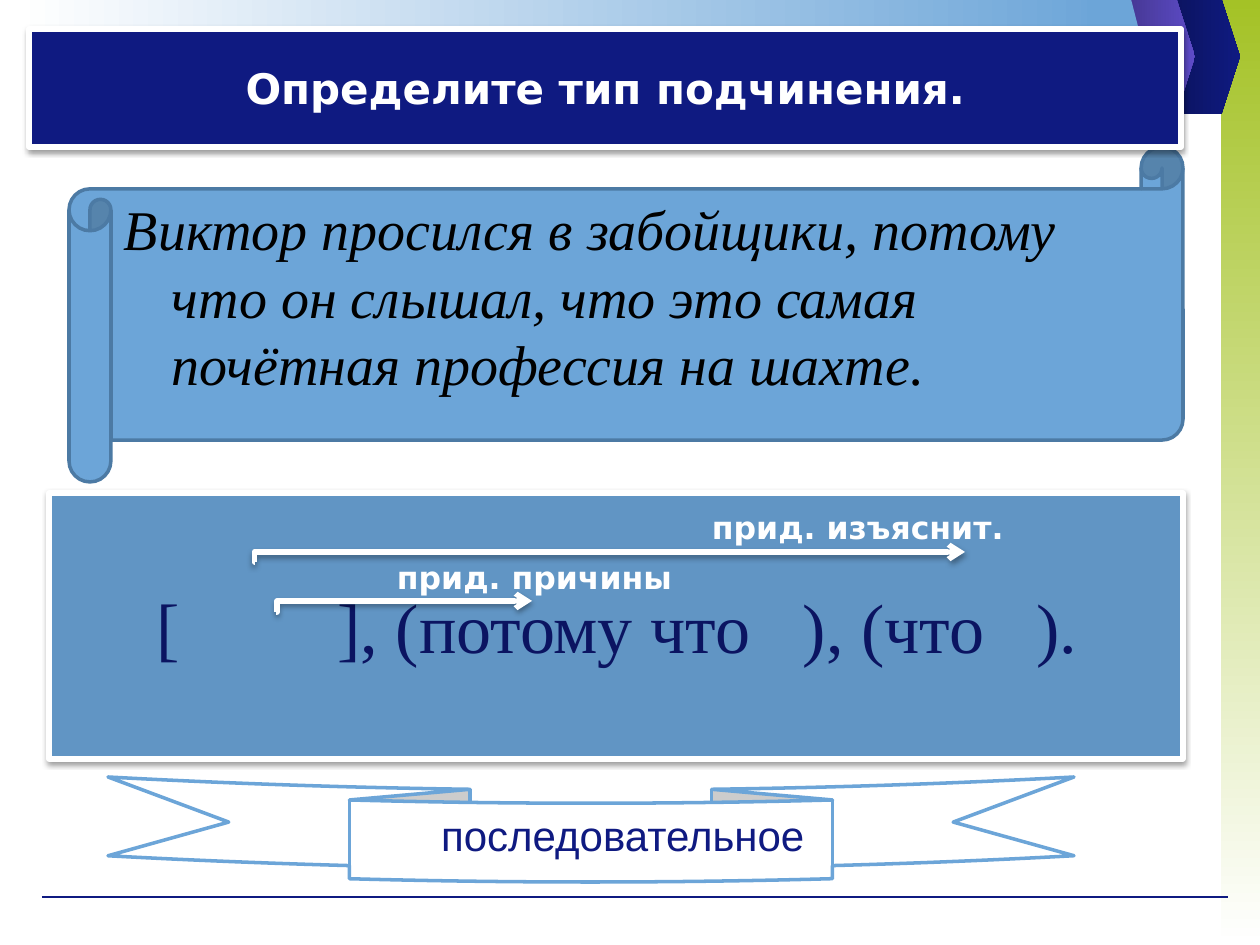
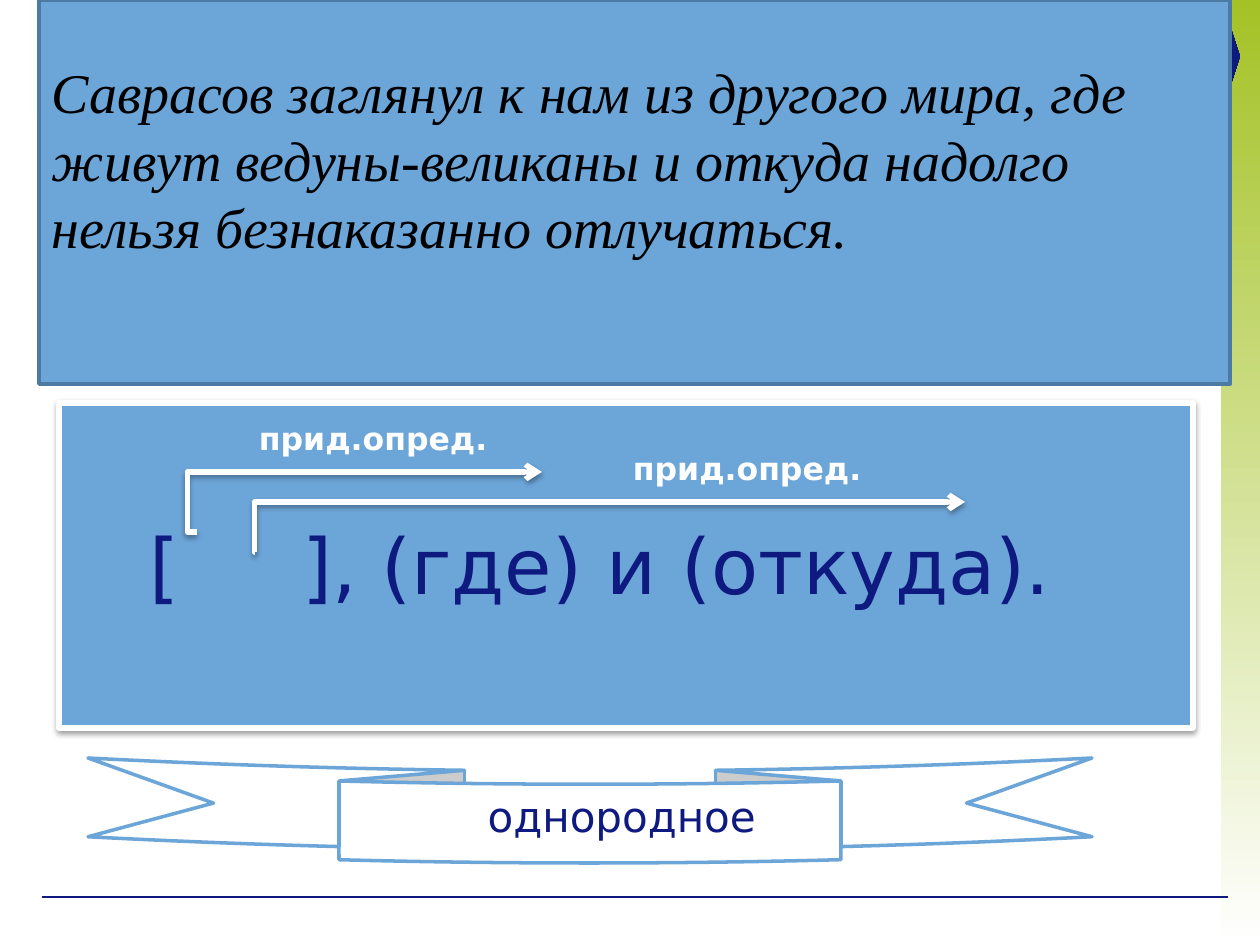
from lxml.etree import SubElement
from pptx import Presentation
from pptx.dml.color import RGBColor as Rgb
from pptx.enum.shapes import MSO_CONNECTOR as Link, MSO_SHAPE as Form
from pptx.enum.text import MSO_ANCHOR as Anchor, PP_ALIGN as Align
from pptx.oxml.ns import qn
from pptx.util import Pt

UNIT = 914400 / 126
WIDE, HIGH = 1260, 945
SERIF, SANS, ARIAL = "Times New Roman", "DejaVu Sans", "Arial"
HUES = {
    "white": "FFFFFF", "black": "000000", "navy": "0F1A81", "deep": "0B135C",
    "ink": "0B1461", "sky": "6CA5D8", "steel": "6195C4", "edge": "4C7AA4",
    "lime": "A4C226", "plum": "43368E", "violet": "5D4BC7",
}
BANDS = [
    (Form.RECTANGLE, (1221, 0, 39, 945), "lime", "white", 270),
    (Form.PENTAGON, (1166, -1, 74, 115), "deep", "navy", 0),
    (Form.PENTAGON, (1121, -1, 74, 115), "plum", "violet", 0),
    (Form.RECTANGLE, (15, 0, 1096, 115), "white", "sky", 0),
    (Form.PENTAGON, (1087, 0, 59, 115), "sky", "sky", 0),
]
RULE = (42, 897, 1228, 897)

SLIDES = [
    {
        "head": ("Определите тип подчинения.", (29, 29, 1152, 118)),
        "quote": {
            "text": "Виктор просился в забойщики, потому что он слышал, "
                    "что это самая почётная профессия на шахте.",
            "form": Form.HORIZONTAL_SCROLL, "box": (69, 147, 1114, 335),
            "top": 6, "hang": 48, "gap": 6,
        },
        "scheme": {
            "parts": ["[", "], (потому что", "), (что", ")."],
            "gaps": [80, 20, 20],
            "box": (49, 493, 1134, 266), "fill": "steel",
            "font": (SERIF, 40, "ink"), "left": 108, "top": 91,
        },
        "type": ("последовательное", (108, 777, 966, 105), ARIAL),
        "arrows": [((276, 612, 532, 601), 400), ((255, 562, 965, 552), -100)],
        "labels": [("прид. причины", (384, 552, 314, 50)),
                   ("прид. изъяснит.", (699, 502, 325, 50))],
    },
    {
        "head": None,
        "quote": {
            "text": "Саврасов заглянул к нам из другого мира, где живут "
                    "ведуны-великаны и откуда надолго нельзя безнаказанно отлучаться.",
            "form": Form.RECTANGLE, "box": (39, 0, 1191, 384),
            "top": 58, "hang": 0, "gap": 0,
        },
        "scheme": {
            "parts": ["[", "], (где) и (откуда)."],
            "gaps": [56],
            "box": (59, 403, 1134, 325), "fill": "sky",
            "font": (SANS, 44, "navy"), "left": 91, "top": 115,
        },
        "type": ("однородное", (88, 758, 1004, 105), SANS),
        "arrows": [((197, 532, 542, 472), -2800), ((255, 552, 965, 502), -100)],
        "labels": [("прид.опред.", (246, 413, 290, 50)),
                   ("прид.опред.", (620, 443, 290, 50))],
    },
]


def px(*nums):
    return [round(n * UNIT) for n in nums]


def hue(name):
    return Rgb.from_string(HUES[name])


def shade(item, alpha, dist):
    props = item.element.spPr
    fx = props.find(qn("a:effectLst"))
    if fx is None:
        fx = SubElement(props, qn("a:effectLst"))
    drop = SubElement(fx, qn("a:outerShdw"), blurRad=str(Pt(3)),
                      dist=str(Pt(dist)), dir="5400000", rotWithShape="0")
    tint = SubElement(drop, qn("a:srgbClr"), val=HUES["black"])
    SubElement(tint, qn("a:alpha"), val=str(alpha * 1000))


def draw(slide, form, box, fill, edge=None, width=0):
    item = slide.shapes.add_shape(form, *px(*box))
    item.shadow.inherit = False
    item.fill.solid()
    item.fill.fore_color.rgb = hue(fill)
    if edge:
        item.line.color.rgb = hue(edge)
        item.line.width = Pt(width)
    else:
        item.line.fill.background()
    return item


def write(item, text, font, size, color, align=Align.LEFT, anchor=Anchor.TOP,
          bold=False, italic=False, left=13, top=6):
    frame = item.text_frame
    frame.word_wrap = True
    frame.vertical_anchor = anchor
    frame.margin_left, frame.margin_top = px(left, top)
    para = frame.paragraphs[0]
    para.text = text
    para.alignment = align
    face = para.font
    face.name, face.size, face.color.rgb = font, Pt(size), hue(color)
    face.bold, face.italic = bold, italic
    return para


def indent(para, left, first):
    props = para._p.get_or_add_pPr()
    props.set("marL", str(px(left)[0]))
    props.set("indent", str(px(first)[0]))


def base(slide):
    for form, box, start, stop, angle in BANDS:
        band = draw(slide, form, box, start)
        if form == Form.PENTAGON:
            band.adjustments[0] = 0.25
        if start != stop:
            band.fill.gradient()
            band.fill.gradient_angle = angle
            for mark, name in zip(band.fill.gradient_stops, (start, stop)):
                mark.color.rgb = hue(name)
    rule = slide.shapes.add_connector(Link.STRAIGHT, *px(*RULE))
    rule.line.color.rgb = hue("navy")
    rule.line.width = Pt(0.75)
    SubElement(rule.element.spPr, qn("a:effectLst"))


def panel(slide, box, fill):
    item = draw(slide, Form.RECTANGLE, box, fill, "white", 3)
    shade(item, 38, 1.6)
    return item


def quote(slide, data):
    item = draw(slide, data["form"], data["box"], "sky", "edge", 2)
    para = write(item, data["text"], SERIF, 32, "black", italic=True, top=data["top"])
    para.space_before = Pt(data["gap"])
    indent(para, data["hang"], -data["hang"])


def scheme(slide, data):
    item = panel(slide, data["box"], data["fill"])
    first, *rest = data["parts"]
    para = write(item, first, *data["font"], left=data["left"], top=data["top"])
    for gap, part in zip(data["gaps"], rest):
        space = para.add_run()
        space.text = " "
        space._r.get_or_add_rPr().set("spc", str(gap * 100))
        para.add_run().text = part


def arrow(slide, ends, bend):
    item = slide.shapes.add_connector(Link.ELBOW, *px(*ends))
    item.line.color.rgb = hue("white")
    item.line.width = Pt(3)
    props = item.element.spPr
    SubElement(props.find(qn("a:ln")), qn("a:tailEnd"), type="arrow")
    guides = props.find(qn("a:prstGeom")).find(qn("a:avLst"))
    SubElement(guides, qn("a:gd"), name="adj1", fmla=f"val {bend}")
    shade(item, 35, 1.8)


def build(slide, data):
    base(slide)
    scheme(slide, data["scheme"])
    quote(slide, data["quote"])
    text, box, font = data["type"]
    ribbon = draw(slide, Form.CURVED_DOWN_RIBBON, box, "white", "sky", 2)
    indent(write(ribbon, text, font, 24, "navy", Align.CENTER), 63, 0)
    if data["head"]:
        text, box = data["head"]
        write(panel(slide, box, "navy"), text, SANS, 24, "white",
              Align.CENTER, Anchor.MIDDLE, bold=True)
    for ends, bend in data["arrows"]:
        arrow(slide, ends, bend)
    for text, box in data["labels"]:
        label = slide.shapes.add_textbox(*px(*box))
        write(label, text, SANS, 18, "white", bold=True)


def main():
    deck = Presentation()
    deck.slide_width, deck.slide_height = px(WIDE, HIGH)
    for data in SLIDES:
        build(deck.slides.add_slide(deck.slide_layouts[6]), data)
    deck.save("out.pptx")


if __name__ == "__main__":
    main()
